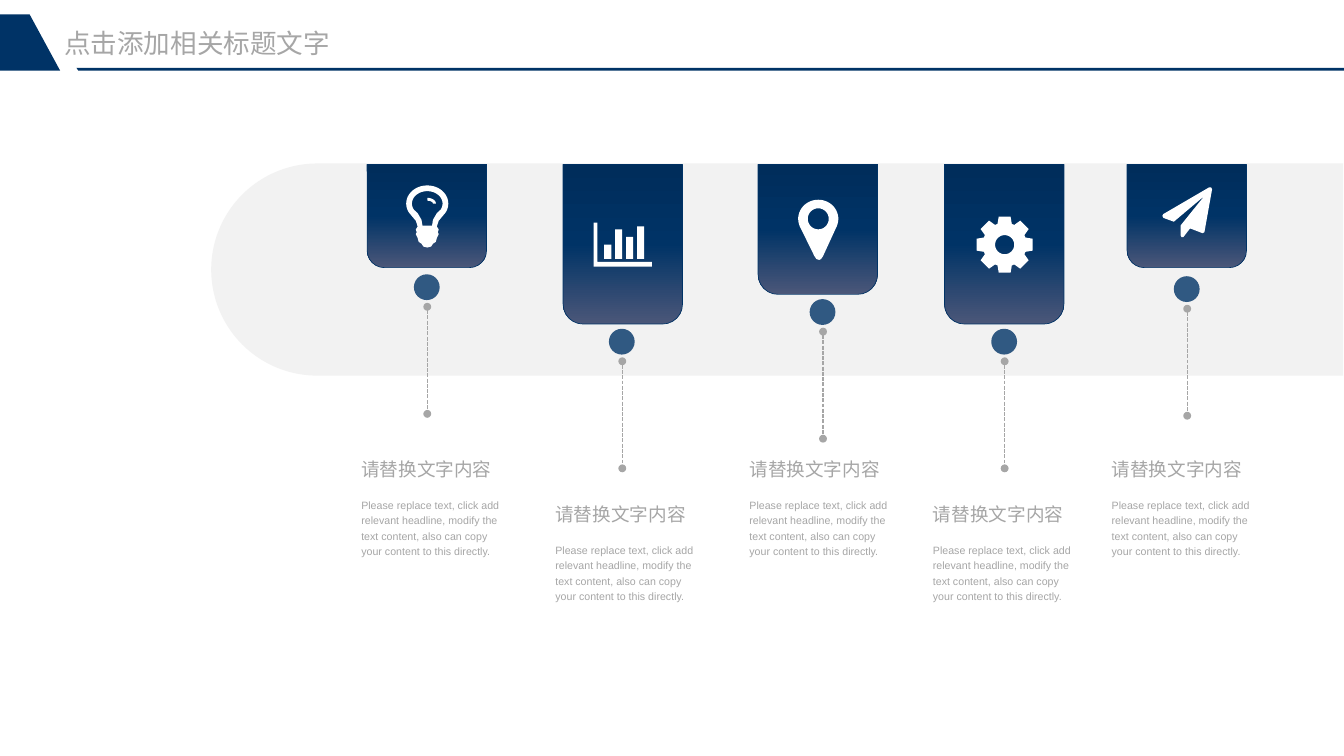
from copy import deepcopy
from math import cos, pi, radians, sin

from lxml.etree import SubElement
from pptx import Presentation
from pptx.dml.color import RGBColor
from pptx.enum.dml import MSO_LINE
from pptx.enum.shapes import MSO_CONNECTOR, MSO_SHAPE
from pptx.enum.text import MSO_ANCHOR, MSO_AUTO_SIZE, PP_ALIGN
from pptx.oxml.ns import qn
from pptx.util import Inches, Pt

COLORS = {"navy": "003366", "deep": "002D5B", "slate": "4B5779",
          "band": "F2F2F2", "gray": "A6A6A6", "white": "FFFFFF"}
TITLE = "点击添加相关标题文字"
HEAD = "请替换文字内容"
BODY = ("Please replace text, click add relevant headline, modify the text "
        "content, also can copy your content to this directly.")


def color(name):
    return RGBColor.from_string(COLORS[name])


def write(frame, text, size=14, font="Arial", hue="gray", space=1.0,
          anchor=MSO_ANCHOR.MIDDLE):
    frame.word_wrap = True
    frame.auto_size = MSO_AUTO_SIZE.NONE
    frame.vertical_anchor = anchor
    frame.margin_left = frame.margin_right = 0
    frame.margin_top = frame.margin_bottom = 0
    line = frame.paragraphs[0]
    line.alignment = PP_ALIGN.LEFT
    line.line_spacing = space
    run = line.add_run()
    run.text = text
    run.font.size = Pt(size)
    run.font.name = font
    run.font.color.rgb = color(hue)


def arc(x, y, wide, high, start=0, end=360, steps=32):
    turns = [radians(start + (end - start) * i / steps) for i in range(steps + 1)]
    return [(x + wide * cos(t), y + high * sin(t)) for t in turns]


def box(left, top, right, low):
    return [(left, top), (right, top), (right, low), (left, low)]


def mirror(half, mid):
    return half + [(2 * mid - x, y) for x, y in reversed(half)]


def bulb():
    x, y = 4.47, 2.13
    base = [(0.12, 2.31), (0.1, 2.37), (0.12, 2.4), (0.11, 2.43), (0.12, 2.45),
            (0.1, 2.49), (0.09, 2.53), (0.06, 2.55), (0.04, 2.58), (0, 2.59)]
    neck = [(0.1, 2.23), (0.06, 2.3), (0.05, 2.36)]
    glass = arc(x, y, 0.22, 0.19, -90, 30) + [(x + a, b) for a, b in base]
    hole = arc(x, y, 0.16, 0.13, -90, 30) + [(x + a, b) for a, b in neck]
    glint = arc(x, y, 0.09, 0.06, -90, 0) + arc(x, y, 0.06, 0.03, 0, -90)
    return [mirror(glass, x), mirror(hole, x), glint]


def chart():
    tops = [2.56, 2.4, 2.48, 2.37]
    axis = [(6.21, 2.33), (6.25, 2.33), (6.25, 2.74), (6.82, 2.74),
            (6.82, 2.79), (6.21, 2.79)]
    lefts = [6.32 + 0.115 * i for i in range(4)]
    return [axis] + [box(x, y, x + 0.075, 2.71) for x, y in zip(lefts, tops)]


def pin():
    tip = [(8.61, 2.68), (8.59, 2.71), (8.57, 2.72), (8.54, 2.71), (8.52, 2.68)]
    return [arc(8.56, 2.29, 0.21, 0.2, -202, 22) + tip,
            arc(8.56, 2.29, 0.11, 0.11)]


def gear():
    x, y = 10.51, 2.56
    tooth = [(0.23, -19), (0.3, -12), (0.3, 12), (0.23, 19)]
    rim = [(x + r * cos(k * pi / 4 + radians(a)), y + r * sin(k * pi / 4 + radians(a)))
           for k in range(8) for r, a in tooth]
    return [rim, arc(x, y, 0.1, 0.1)]


def plane():
    return [[(12.68, 1.98), (12.6, 2.43), (12.58, 2.44), (12.45, 2.39),
             (12.38, 2.48), (12.36, 2.48), (12.35, 2.46), (12.35, 2.36),
             (12.6, 2.05), (12.28, 2.32), (12.17, 2.28), (12.16, 2.26),
             (12.17, 2.24), (12.65, 1.96), (12.67, 1.96)]]


class Page:
    def __init__(self, deck):
        self.slide = deck.slides.add_slide(deck.slide_layouts[5])
        self.shapes = self.slide.shapes

    def title(self, text, *area):
        shape = self.shapes.title
        shape.left, shape.top, shape.width, shape.height = map(Inches, area)
        write(shape.text_frame, text, size=20, anchor=MSO_ANCHOR.TOP)

    def text(self, text, *area, **style):
        shape = self.shapes.add_textbox(*map(Inches, area))
        write(shape.text_frame, text, space=1.2, **style)

    def paint(self, shape, hue):
        shape.shadow.inherit = False
        shape.fill.solid()
        shape.fill.fore_color.rgb = color(hue)
        shape.line.fill.background()
        return shape

    def shape(self, kind, hue, *area):
        return self.paint(self.shapes.add_shape(kind, *map(Inches, area)), hue)

    def band(self, *area):
        shape = self.shape(MSO_SHAPE.ROUND_2_SAME_RECTANGLE, "band", *area)
        shape.rotation = 270
        shape.adjustments[0] = 0.5

    def card(self, *area):
        shape = self.shape(MSO_SHAPE.ROUND_2_SAME_RECTANGLE, "navy", *area)
        shape.rotation = 180
        shape.line.color.rgb = color("navy")
        shape.line.width = Pt(0.5)
        shape.fill.gradient()
        shape.fill.gradient_angle = 270
        stops = shape.fill.gradient_stops
        first = shape.element.spPr.find(".//" + qn("a:gs"))
        first.getparent().append(deepcopy(first))
        stops = shape.fill.gradient_stops
        for stop, place, hue in zip(stops, (0, 0.5, 1), ("slate", "navy", "deep")):
            stop.position = place
            stop.color.rgb = color(hue)

    def dot(self, x, top):
        shape = self.shape(MSO_SHAPE.OVAL, "navy", x - 0.14, top, 0.27, 0.27)
        tint = shape.element.spPr.find(qn("a:solidFill"))[0]
        SubElement(tint, qn("a:alpha")).set("val", "80000")

    def stem(self, x, top, low):
        link = self.shapes.add_connector(
            MSO_CONNECTOR.STRAIGHT, *map(Inches, (x, top, x, low)))
        link.line.color.rgb = color("gray")
        link.line.width = Pt(1)
        link.line.dash_style = MSO_LINE.SQUARE_DOT
        props = link.element.spPr
        for end in ("a:headEnd", "a:tailEnd"):
            SubElement(props.find(qn("a:ln")), qn(end)).set("type", "oval")
        SubElement(props, qn("a:effectLst"))

    def form(self, hue, loops):
        loops = [[(Inches(x), Inches(y)) for x, y in loop] for loop in loops]
        pen = self.shapes.build_freeform(*loops[0][0])
        pen.add_line_segments(loops[0][1:], close=True)
        for loop in loops[1:]:
            pen.move_to(*loop[0])
            pen.add_line_segments(loop[1:], close=True)
        self.paint(pen.convert_to_shape(), hue)


def main():
    deck = Presentation()
    deck.slide_width, deck.slide_height = Inches(14.06), Inches(7.91)
    page = Page(deck)
    page.band(7.02, -3.1, 2.22, 11.84)
    steps = [(3.84, 1.08, bulb, 4.47, 2.87, 3.78, 4.76),
             (5.89, 1.67, chart, 6.51, 3.44, 5.81, 5.23),
             (7.93, 1.36, pin, 8.61, 3.13, 7.84, 4.76),
             (9.88, 1.67, gear, 10.51, 3.44, 9.76, 5.23),
             (11.79, 1.08, plane, 12.42, 2.89, 11.63, 4.76)]
    for left, high, icon, mid, top, edge, head in steps:
        page.card(left, 1.72, 1.25, high)
        page.form("white", icon())
        page.dot(mid, top)
        page.stem(mid, top + 0.34, top + 1.46)
        page.text(HEAD, edge, head, 1.56, 0.26)
        page.text(BODY, edge, head + 0.44, 1.56, 0.63, size=8)
    page.form("navy", [[(0.8, 0.71), (14.06, 0.71), (14.06, 0.74), (0.82, 0.74)]])
    page.form("navy", [[(0, 0.15), (0.31, 0.15), (0.63, 0.74), (0, 0.74)]])
    page.title(TITLE, 0.67, 0.28, 3.35, 0.34)
    deck.save("out.pptx")


if __name__ == "__main__":
    main()
